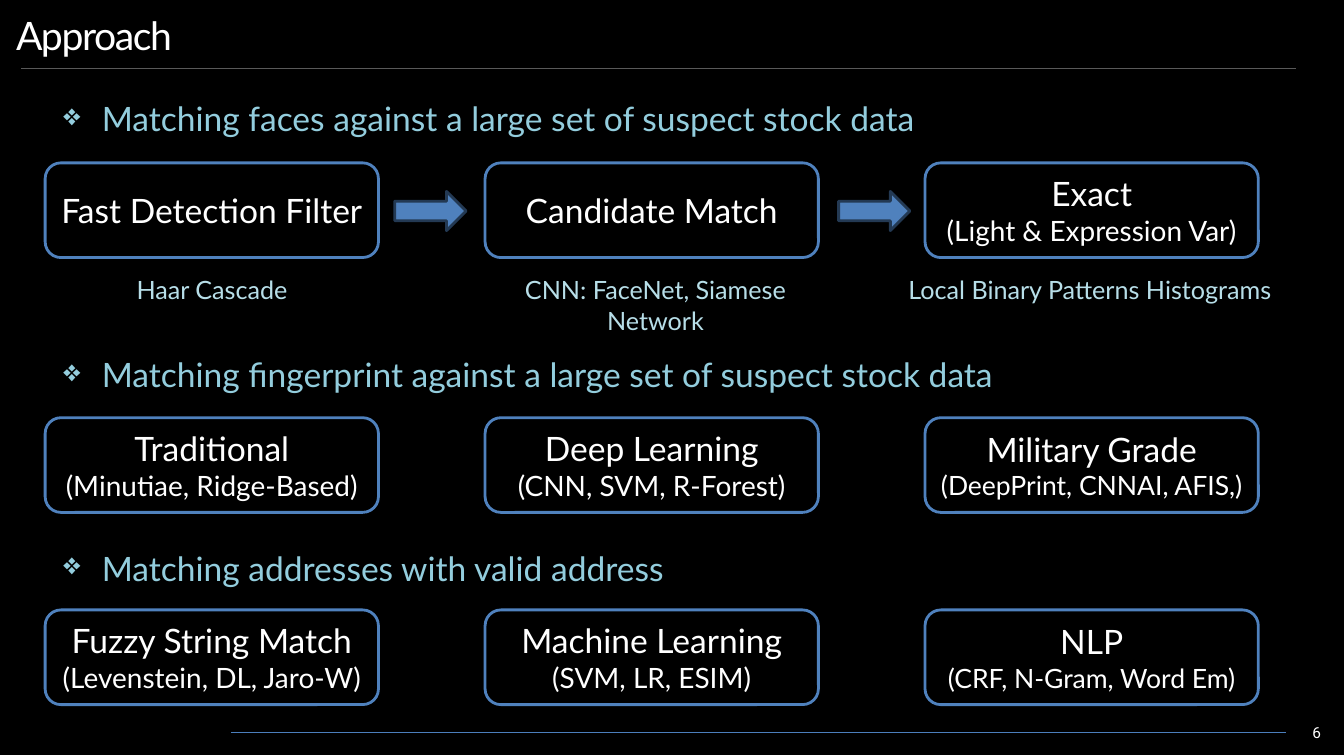
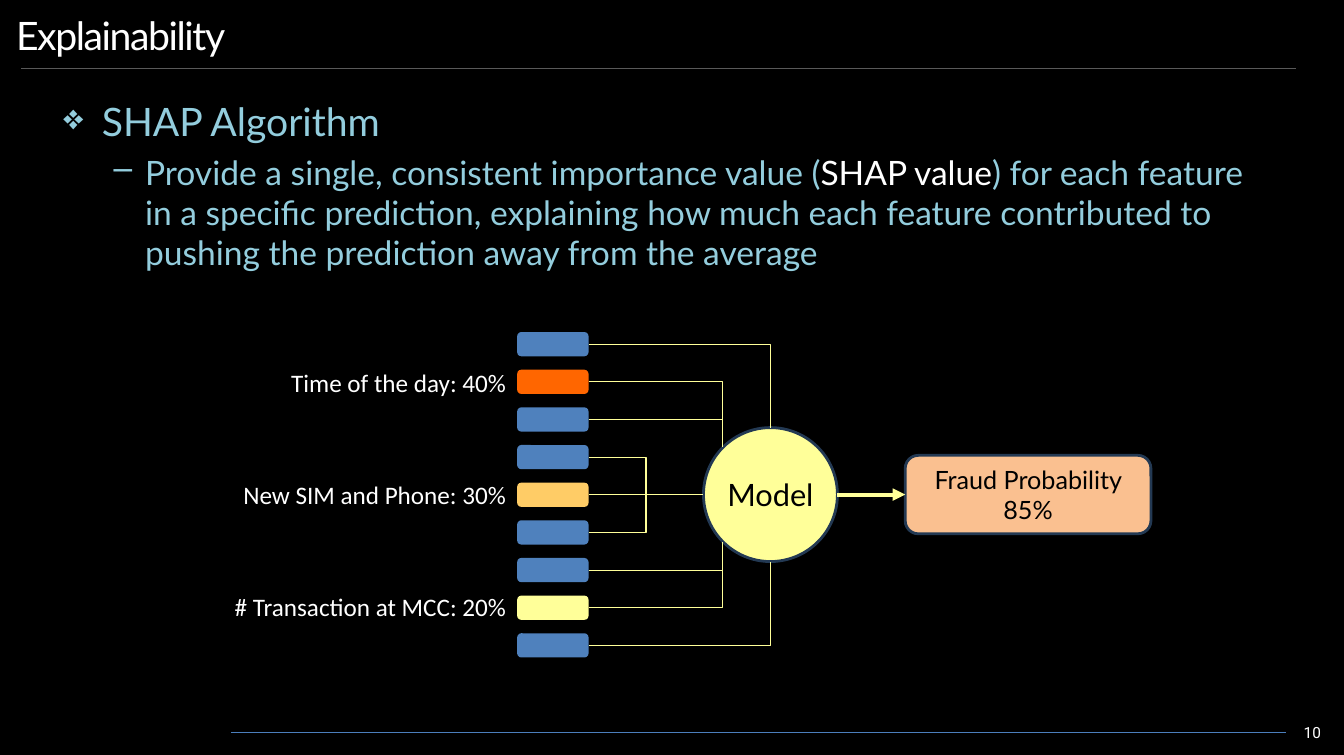
from lxml import etree
from pptx import Presentation
from pptx import util as u
from pptx.dml import color as dml_color
from pptx.enum import shapes, text
from pptx.oxml import ns

COLORS = {
    "black": "000000", "white": "FFFFFF", "aqua": "93CDDD", "pale_aqua": "B7DEE8",
    "blue": "4F81BD", "navy": "233953", "rule": "595959", "footer": "4B7EBC",
    "yellow": "FFFF99", "amber": "FFCC66", "orange": "FF6600", "peach": "FAC090",
}
KIND = shapes.MSO_SHAPE
CONNECTOR = shapes.MSO_CONNECTOR
ALIGN = text.PP_ALIGN
MIDDLE = text.MSO_ANCHOR.MIDDLE
BULLETS = [  # left margin, hanging indent, size in percent, character
    (0.97, 0.97, 90, "❖"),
    (2.06, 0.79, 100, "–"),
]


def rgb(name):
    return dml_color.RGBColor.from_string(COLORS[name])


def add_xml(parent, tag, **attributes):
    return etree.SubElement(parent, ns.qn(tag), **attributes)


class Deck:
    """Holds the shared style and the slide being drawn."""

    def __init__(self):
        self.presentation = Presentation()
        self.presentation.slide_width = u.Cm(33.91)
        self.presentation.slide_height = u.Cm(19.05)
        background = self.presentation.slide_master.background.fill
        background.solid()
        background.fore_color.rgb = rgb("black")
        self.slide = None

    def new_slide(self, title, number):
        self.slide = self.presentation.slides.add_slide(self.presentation.slide_layouts[5])
        heading = self.slide.shapes.title
        heading.left, heading.top = u.Cm(0.15), u.Cm(0.03)
        heading.width, heading.height = u.Cm(32.79), u.Cm(1.7)
        frame = heading.text_frame
        frame.auto_size = text.MSO_AUTO_SIZE.NONE
        frame.vertical_anchor = MIDDLE
        run = self.add_run(frame.paragraphs[0], title, 28, "white")
        run.font._element.set("spc", "-100")
        frame.paragraphs[0].alignment = ALIGN.LEFT
        self.line((0.53, 1.73), (32.69, 1.73), "rule")
        self.line((5.84, 18.49), (32.44, 18.49), "footer")
        page = self.text_box(25.73, 17.96, 7.9, 1.04, number, 11, "white", ALIGN.RIGHT, "Roboto")
        page.text_frame.vertical_anchor = MIDDLE
        page.text_frame.margin_left = page.text_frame.margin_right = u.Cm(0.3)

    def add_run(self, paragraph, words, size, color, font="Lato"):
        run = paragraph.add_run()
        run.text = words
        run.font.size = u.Pt(size)
        run.font.name = font
        run.font.color.rgb = rgb(color)
        return run

    def empty_box(self, left, top, width, height):
        box = self.slide.shapes.add_textbox(u.Cm(left), u.Cm(top), u.Cm(width), u.Cm(height))
        box.text_frame.word_wrap = True
        return box

    def text_box(self, left, top, width, height, words, size, color, align, font="Lato"):
        box = self.empty_box(left, top, width, height)
        paragraph = box.text_frame.paragraphs[0]
        paragraph.alignment = align
        self.add_run(paragraph, words, size, color, font)
        return box

    def bullets(self, top, height, items):
        """Each item is its level, its size and a list of (words, color) runs."""
        frame = self.empty_box(1.35, top, 31.09, height).text_frame
        for index, (level, size, runs) in enumerate(items):
            paragraph = frame.add_paragraph() if index else frame.paragraphs[0]
            margin, hanging, percent, character = BULLETS[level]
            paragraph.level = level
            properties = paragraph._p.get_or_add_pPr()
            properties.set("marL", str(u.Cm(margin)))
            properties.set("indent", str(-u.Cm(hanging)))
            if index:
                paragraph.space_before = u.Pt(5)
            add_xml(properties, "a:buSzPct", val=str(percent * 1000))
            add_xml(properties, "a:buChar", char=character)
            for words, color in runs:
                self.add_run(paragraph, words, size, color)

    def shape(self, kind, left, top, width, height, fill=None, outline=None, lines=(),
              color="white"):
        """Draw a preset shape; lines holds one (words, size) pair per paragraph."""
        shape = self.slide.shapes.add_shape(
            kind, u.Cm(left), u.Cm(top), u.Cm(width), u.Cm(height))
        shape.shadow.inherit = False
        if fill:
            shape.fill.solid()
            shape.fill.fore_color.rgb = rgb(fill)
        else:
            shape.fill.background()
        if outline:
            shape.line.color.rgb = rgb(outline)
            shape.line.width = u.Pt(2)
        else:
            shape.line.fill.background()
        frame = shape.text_frame
        frame.word_wrap = True
        frame.vertical_anchor = MIDDLE
        for index, (words, size) in enumerate(lines):
            paragraph = frame.add_paragraph() if index else frame.paragraphs[0]
            paragraph.alignment = ALIGN.CENTER
            self.add_run(paragraph, words, size, color)
        return shape

    def line(self, start, end, color, width=0.75, kind=CONNECTOR.STRAIGHT):
        points = [u.Cm(value) for value in (*start, *end)]
        connector = self.slide.shapes.add_connector(kind, *points)
        connector.line.color.rgb = rgb(color)
        connector.line.width = u.Pt(width)
        add_xml(connector._element.spPr, "a:effectLst")
        return connector

    def link(self, connector, source, source_site, target, target_site):
        """Glue both ends of a connector to connection sites of two shapes."""
        glue = connector._element.nvCxnSpPr.cNvCxnSpPr
        ends = ((glue.get_or_add_stCxn(), source, source_site),
                (glue.get_or_add_endCxn(), target, target_site))
        for end, shape, site in ends:
            end.id, end.idx = shape.shape_id, site


def draw_approach(deck):
    deck.new_slide("Approach", "6")
    card_width, card_height = 8.41, 2.39
    sections = [
        (2.34, 4.11, "Matching faces against a large set of suspect stock data",
         [[("Fast Detection Filter", 24)],
          [("Candidate Match", 24)],
          [("Exact", 24), ("(Light & Expression Var)", 20)]]),
        (8.81, 10.54, "Matching fingerprint against a large set of suspect stock data",
         [[("Traditional", 24), ("(Minutiae, Ridge-Based)", 20)],
          [("Deep Learning", 24), ("(CNN, SVM, R-Forest)", 20)],
          [("Military Grade", 24), ("(DeepPrint, CNNAI, AFIS,)", 19)]]),
        (13.69, 15.39, "Matching addresses with valid address",
         [[("Fuzzy String Match", 24), ("(Levenstein, DL, Jaro-W)", 20)],
          [("Machine Learning", 24), ("(SVM, LR, ESIM)", 20)],
          [("NLP", 24), ("(CRF, N-Gram, Word Em)", 19)]]),
    ]
    for bullet_top, card_top, heading, cards in sections:
        deck.bullets(bullet_top, 1.7, [(0, 24, [(heading, "aqua")])])
        for column, lines in enumerate(cards):
            deck.shape(KIND.ROUNDED_RECTANGLE, 1.14 + 11.1 * column, card_top,
                       card_width, card_height, outline="blue", lines=lines)
    captions = [
        (5.35, card_width, "Haar Cascade"),
        (16.54, card_width, "CNN: FaceNet, Siamese Network"),
        (27.5, 9.93, "Local Binary Patterns Histograms"),
    ]
    for center, width, words in captions:
        deck.text_box(center - width / 2, 6.81, width, 1.02, words, 18, "pale_aqua",
                      ALIGN.CENTER)
    for left in (9.96, 21.16):
        deck.shape(KIND.RIGHT_ARROW, left, 4.83, 1.8, 0.99, "blue", "navy")


def draw_explainability(deck):
    deck.new_slide("Explainability", "10")
    deck.bullets(2.34, 5.54, [
        (0, 28, [("SHAP Algorithm", "aqua")]),
        (1, 24, [("Provide a single, consistent importance value (", "aqua"),
                 ("SHAP value", "white"),
                 (") for each feature in a specific prediction, explaining how much each "
                  "feature contributed to pushing the prediction away from the average",
                  "aqua")]),
    ])

    center_x, center_y, radius = 19.44, 12.48, 1.69
    model = deck.shape(KIND.OVAL, center_x - radius, center_y - radius, 2 * radius, 2 * radius,
                       "yellow", "navy", [("Model", 22)], "black")
    model.text_frame.margin_left = model.text_frame.margin_right = 0

    diagonal = 0.71 * radius
    sites = [  # connection sites of the circle, anticlockwise from the top
        (center_x, center_y - radius),
        (center_x - diagonal, center_y - diagonal),
        (center_x - radius, center_y),
        (center_x - diagonal, center_y + diagonal),
        (center_x, center_y + radius),
    ]
    bar_left, bar_width, bar_height = 13.05, 1.8, 0.61
    bar_sites = [0, 1, 1, 2, 2, 2, 3, 3, 4]
    highlights = {1: "orange", 4: "amber", 7: "yellow"}
    for index, site in enumerate(bar_sites):
        top = 8.38 + 0.95 * index
        bar = deck.shape(KIND.ROUNDED_RECTANGLE, bar_left, top, bar_width, bar_height,
                         highlights.get(index, "blue"))
        connector = deck.line((bar_left + bar_width, top + bar_height / 2), sites[site],
                              "yellow", kind=CONNECTOR.ELBOW)
        if site != 2:
            geometry = connector._element.spPr.find(ns.qn("a:prstGeom"))
            geometry.set("prst", "bentConnector2")
        deck.link(connector, bar, 3, model, site)

    result_left, result_height = 22.84, 1.98
    result = deck.shape(KIND.ROUNDED_RECTANGLE, result_left, center_y - result_height / 2,
                        6.2, result_height, "peach", "navy",
                        [("Fraud Probability 85%", 18)], "black")
    arrow = deck.line((center_x + radius, center_y), (result_left, center_y), "yellow", 3)
    add_xml(arrow.line._get_or_add_ln(), "a:tailEnd", type="triangle")
    deck.link(arrow, model, 6, result, 1)

    labels = ["Time of the day: 40%", "New SIM and Phone: 30%", "# Transaction at MCC: 20%"]
    for index, words in enumerate(labels):
        deck.text_box(5.02, 9.14 + 2.83 * index, 8, 1.02, words, 18, "white", ALIGN.RIGHT,
                      "Calibri")


def main():
    deck = Deck()
    draw_approach(deck)
    draw_explainability(deck)
    deck.presentation.save("out.pptx")


if __name__ == "__main__":
    main()
